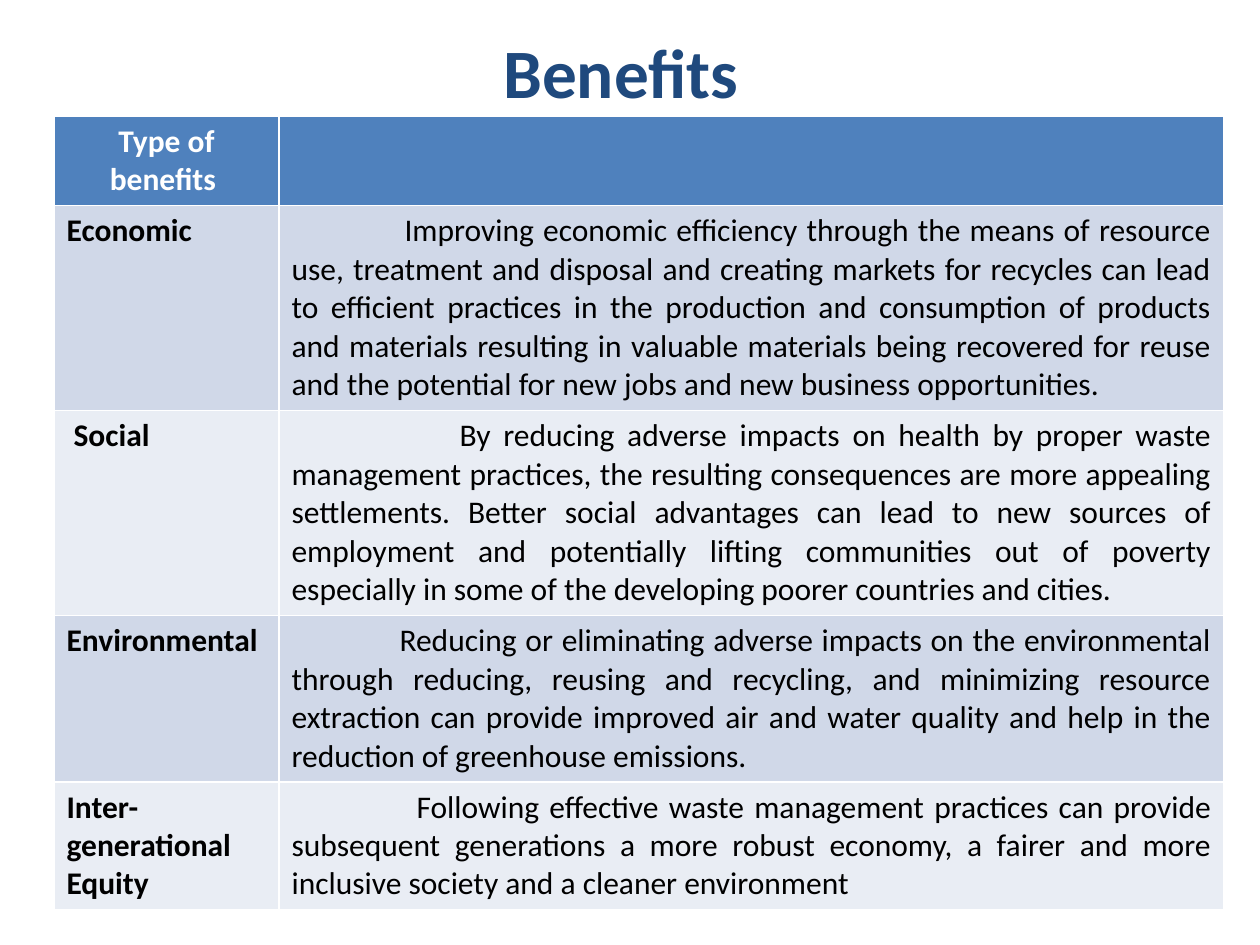
from dataclasses import dataclass

from pptx import Presentation
from pptx.dml.color import RGBColor
from pptx.enum.text import MSO_ANCHOR, MSO_AUTO_SIZE, PP_ALIGN
from pptx.util import Pt

PX = 914400 // 126
LEFT, MID, JUST = PP_ALIGN.LEFT, PP_ALIGN.CENTER, PP_ALIGN.JUSTIFY
CENTER, FIXED = MSO_ANCHOR.MIDDLE, MSO_AUTO_SIZE.NONE
HEAD, BANDS = "4F81BD", ("D0D8E8", "E9EDF4")
WIDTHS = (225, 945)


@dataclass
class Item:
    name: str
    text: str
    height: int
    indent: int
    shift: int = 0


ITEMS = [
    Item("Economic",
         "Improving economic efficiency through the means of resource use, "
         "treatment and disposal and creating markets for recycles can lead to "
         "efficient practices in the production and consumption of products and "
         "materials resulting in valuable materials being recovered for reuse and "
         "the potential for new jobs and new business opportunities.", 204, 113),
    Item("Social",
         "By reducing adverse impacts on health by proper waste management "
         "practices, the resulting consequences are more appealing settlements. "
         "Better social advantages can lead to new sources of employment and "
         "potentially lifting communities out of poverty especially in some of "
         "the developing poorer countries and cities.", 205, 168, 7),
    Item("Environmental",
         "Reducing or eliminating adverse impacts on the environmental through "
         "reducing, reusing and recycling, and minimizing resource extraction can "
         "provide improved air and water quality and help in the reduction of "
         "greenhouse emissions.", 166, 108),
    Item("Inter-generational Equity",
         "Following effective waste management practices can provide subsequent "
         "generations a more robust economy, a fairer and more inclusive society "
         "and a cleaner environment", 127, 125),
]


def px(count: int) -> int:
    return count * PX


def color(code: str) -> RGBColor:
    return RGBColor.from_string(code)


def style(thing, values: dict) -> None:
    for key, value in values.items():
        setattr(thing, key, value)


def write(frame, text: str, size: float, ink: str, bold: bool, align,
          indent: int = 0) -> None:
    frame.text = text
    para = frame.paragraphs[0]
    para.alignment = align
    if indent:
        para._p.get_or_add_pPr().set("indent", str(px(indent)))
    font = para.runs[0].font
    style(font, {"name": "Calibri", "size": Pt(size), "bold": bold})
    font.color.rgb = color(ink)


def paint(cell, code: str) -> None:
    cell.fill.solid()
    cell.fill.fore_color.rgb = color(code)


def draw_title(slide) -> None:
    title = slide.shapes.title
    style(title, {"left": px(54), "top": px(26),
                  "width": px(1134), "height": px(90)})
    frame = title.text_frame
    style(frame, {"vertical_anchor": CENTER, "auto_size": FIXED,
                  "word_wrap": True})
    write(frame, "Benefits", 39.6, "1F497D", True, MID)


def draw_table(slide) -> None:
    heights = [89] + [item.height for item in ITEMS]
    table = slide.shapes.add_table(
        len(heights), len(WIDTHS), px(54), px(116),
        px(sum(WIDTHS)), px(sum(heights))).table
    for col, width in zip(table.columns, WIDTHS):
        col.width = px(width)
    for row, height in zip(table.rows, heights):
        row.height = px(height)
    for cell in table.rows[0].cells:
        paint(cell, HEAD)
    write(table.cell(0, 0).text_frame, "Type of benefits ", 18, "FFFFFF", True, MID)
    for num, item in enumerate(ITEMS):
        name, text = table.rows[num + 1].cells
        for cell in (name, text):
            paint(cell, BANDS[num % 2])
        write(name.text_frame, item.name, 18, "000000", True, LEFT, item.shift)
        write(text.text_frame, item.text, 18, "000000", False, JUST, item.indent)


def main() -> None:
    deck = Presentation()
    style(deck, {"slide_width": px(1260), "slide_height": px(945)})
    slide = deck.slides.add_slide(deck.slide_layouts[5])
    draw_title(slide)
    draw_table(slide)
    deck.save("out.pptx")


if __name__ == "__main__":
    main()
